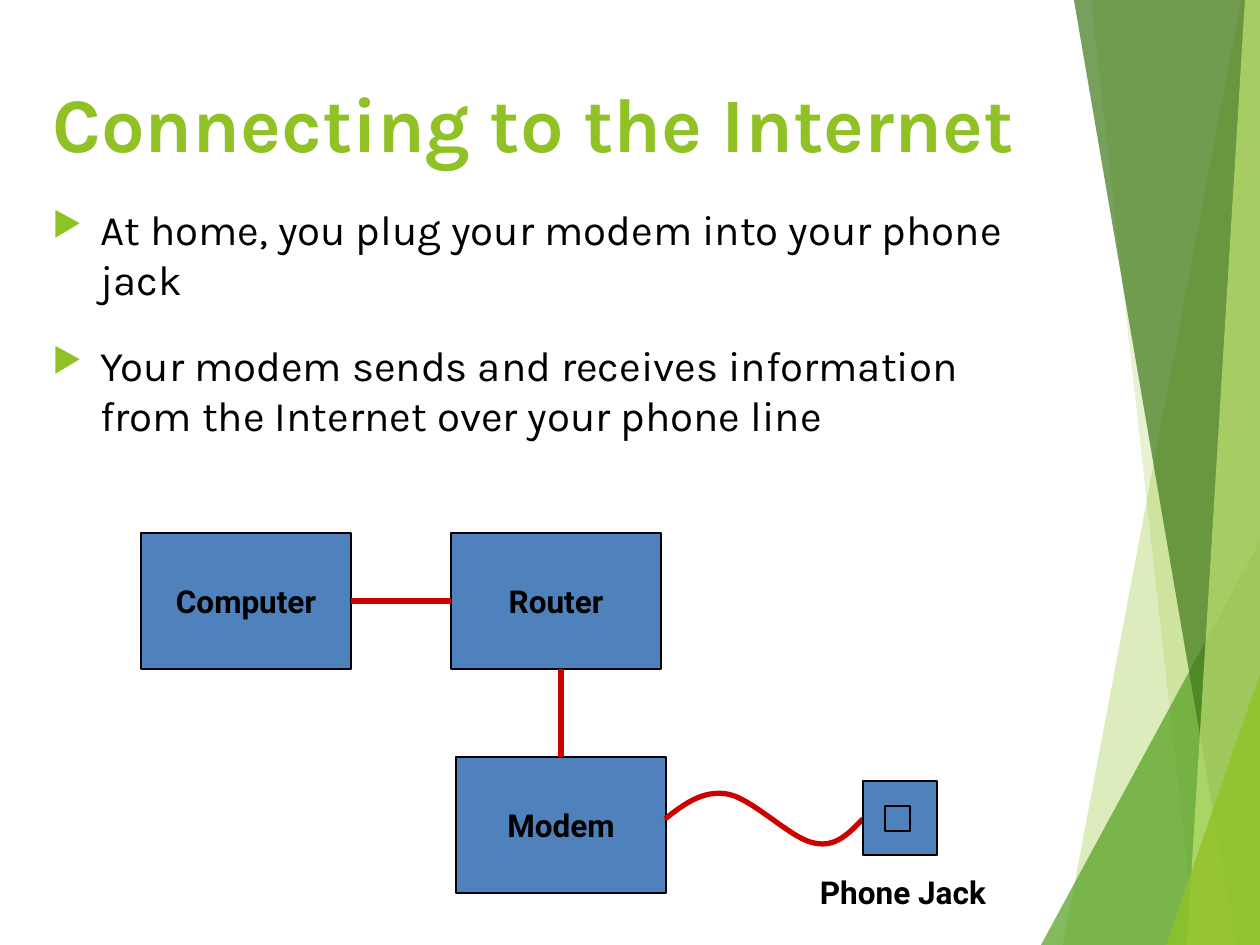
from dataclasses import dataclass
from lxml.etree import SubElement as Sub
from pptx import Presentation
from pptx.dml.color import RGBColor as Rgb
from pptx.enum.shapes import MSO_CONNECTOR as Conn, MSO_SHAPE as Kind
from pptx.enum.text import MSO_ANCHOR as Anchor, PP_ALIGN as Align
from pptx.oxml.ns import qn
from pptx.util import Emu, Pt

SCALE = 914400 / 126


@dataclass(frozen=True)
class Theme:
    lime: str = "90C226"
    leaf: str = "54A021"
    moss: str = "3F7819"
    pale: str = "C0E474"
    blue: str = "4F81BD"
    red: str = "CC0000"
    ink: str = "000000"
    head: str = "Karla"
    label: str = "Roboto"
    big: int = 44
    mid: int = 24
    small: int = 18
    thin: float = 0.75
    thick: int = 3


T = Theme()


def px(*nums):
    return [Emu(round(n * SCALE)) for n in nums]


def paint(shape, fill=None, alpha=100, line=None, width=T.thin):
    shape.shadow.inherit = False
    if fill:
        shape.fill.solid()
        shape.fill.fore_color.rgb = Rgb.from_string(fill)
        if alpha < 100:
            color = shape.fill._xPr.find(qn("a:solidFill"))[0]
            Sub(color, qn("a:alpha"), val=str(alpha * 1000))
    else:
        shape.fill.background()
    if line:
        shape.line.color.rgb = Rgb.from_string(line)
        shape.line.width = Pt(width)
    else:
        shape.line.fill.background()


def mark(para):
    props = para._p.get_or_add_pPr()
    dent = px(48)[0]
    props.set("marL", str(dent))
    props.set("indent", str(-dent))
    Sub(Sub(props, qn("a:buClr")), qn("a:srgbClr"), val=T.lime)
    Sub(props, qn("a:buSzPct"), val="80000")
    Sub(props, qn("a:buChar"), char="▶")


def write(shape, *lines, size=T.small, font=T.label, color=T.ink, bold=False,
          align=Align.LEFT, anchor=Anchor.TOP, wrap=True, bullet=False, gap=0):
    frame = shape.text_frame
    frame.word_wrap = wrap
    frame.vertical_anchor = anchor
    for i, line in enumerate(lines):
        para = frame.add_paragraph() if i else frame.paragraphs[0]
        para.alignment = align
        if i:
            para.space_before = Pt(gap)
        if bullet:
            mark(para)
        run = para.add_run()
        run.text = line
        run.font.size, run.font.name, run.font.bold = Pt(size), font, bold
        run.font.color.rgb = Rgb.from_string(color)


def trace(shapes, points, close):
    (x, y), *rest = points
    pen = shapes.build_freeform(x, y, scale=SCALE)
    pen.add_line_segments(rest, close=close)
    return pen.convert_to_shape()


def facets(shapes, x, y, w, h):
    for peak, top, foot, color, alpha in (
        (200, 0, 22, T.lime, 30),
        (50, 0, 155, T.lime, 20),
        (w, 541, 0, T.leaf, 72),
        (33, 0, 195, T.moss, 70),
        (204, 0, 146, T.pale, 70),
        (w, 674, 125, T.lime, 80),
    ):
        points = [(peak, top), (foot, h), (w, h), (w, top)]
        shape = trace(shapes, [(x + a, y + b) for a, b in points], True)
        paint(shape, color, alpha)


def copy_block(shapes, x, y, w, h):
    head = 150
    title = shapes.add_textbox(*px(x, y, w, head))
    write(title, "Connecting to the Internet", size=T.big, font=T.head,
          color=T.lime, bold=True, anchor=Anchor.MIDDLE)
    body = shapes.add_textbox(*px(x, y + head, w, h - head))
    write(body, "At home, you plug your modem into your phone jack",
          "Your modem sends and receives information from the Internet "
          "over your phone line",
          size=T.mid, font=T.head, bullet=True, gap=20)


def node(shapes, x, y, w, h, text=None):
    shape = shapes.add_shape(Kind.RECTANGLE, *px(x, y, w, h))
    paint(shape, T.blue, line=T.ink)
    if text:
        write(shape, text, bold=True, align=Align.CENTER,
              anchor=Anchor.MIDDLE, wrap=False)
    return shape


def cable(shapes, x1, y1, x2, y2):
    line = shapes.add_connector(Conn.STRAIGHT, *px(x1, y1, x2, y2))
    line.line.color.rgb = Rgb.from_string(T.red)
    line.line.width = Pt(T.thick)
    Sub(line._element.spPr, qn("a:effectLst"))
    return line


def curve(shapes, points):
    shape = trace(shapes, points, False)
    track = shape._element.spPr.find(".//" + qn("a:path"))
    steps = track.findall(qn("a:lnTo"))
    for i in range(0, len(steps), 3):
        bend = Sub(track, qn("a:cubicBezTo"))
        for step in steps[i:i + 3]:
            bend.append(step[0])
            track.remove(step)
    paint(shape, line=T.red, width=T.thick)


def network(shapes, x, y):
    w, h = 210, 136
    host = node(shapes, x, y, w, h, "Computer")
    modem = node(shapes, x + 315, y + 224, w, h, "Modem")
    wave = [(0, 0), (19, -15), (38, -29), (62, -25), (87, -21), (126, 20),
            (149, 24), (171, 29), (184, 14), (198, 0)]
    curve(shapes, [(x + 524 + a, y + 286 + b) for a, b in wave])
    node(shapes, x + 722, y + 248, 74, 74)
    node(shapes, x + 744, y + 273, 25, 25)
    label = shapes.add_textbox(*px(x + 662, y + 334, 200, 50))
    write(label, "Phone Jack", bold=True, align=Align.CENTER, wrap=False)
    router = node(shapes, x + 310, y, w, h, "Router")
    link = cable(shapes, x + 310, y + h / 2, x + w, y + h / 2)
    link.begin_connect(router, 1)
    link.end_connect(host, 3)
    drop = cable(shapes, x + 420, y + 224, x + 420, y + h)
    drop.begin_connect(modem, 0)


def main():
    deck = Presentation()
    deck.slide_width, deck.slide_height = px(1260, 945)
    shapes = deck.slides.add_slide(deck.slide_layouts[6]).shapes
    facets(shapes, 1041, 0, 219, 945)
    copy_block(shapes, 40, 47, 1000, 810)
    network(shapes, 141, 533)
    deck.save("out.pptx")


if __name__ == "__main__":
    main()
